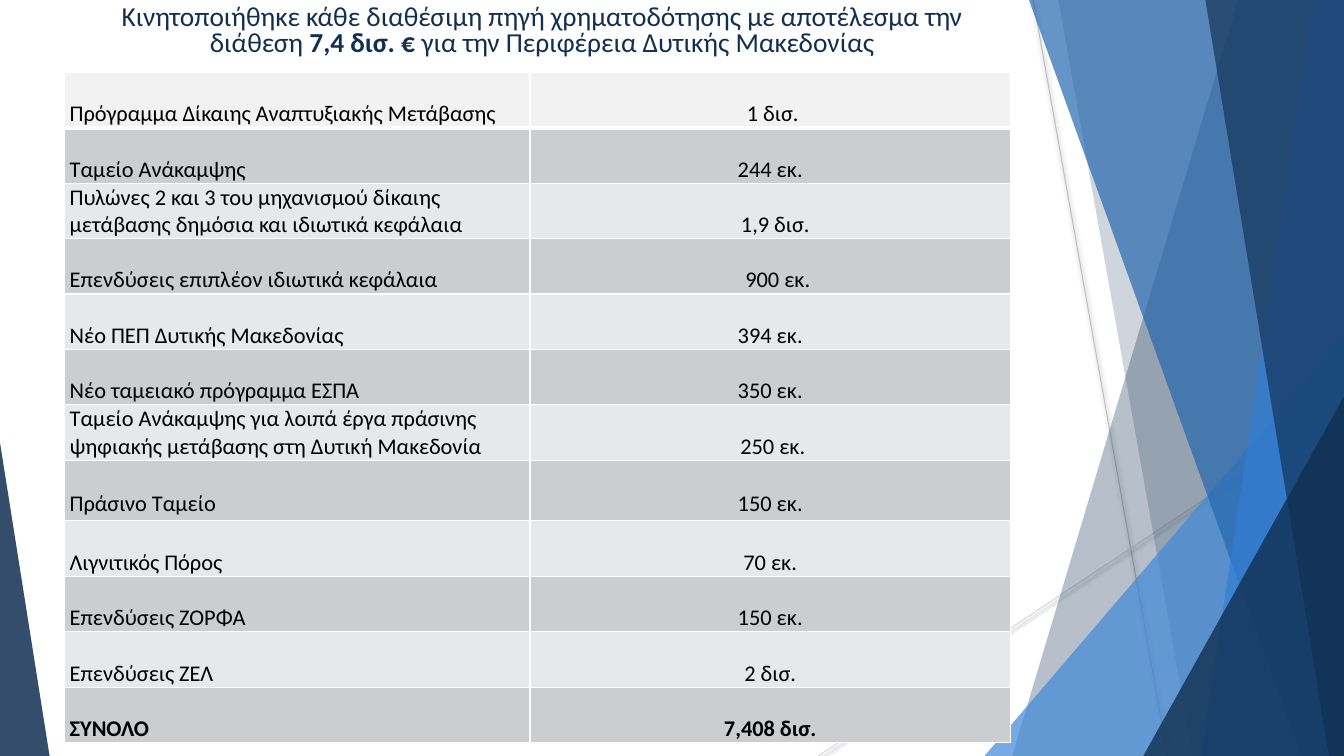
"""Builds the slide on funding sources for Western Macedonia."""
from lxml.etree import SubElement
from pptx import Presentation
from pptx.dml.color import RGBColor
from pptx.enum.shapes import MSO_CONNECTOR, MSO_SHAPE
from pptx.enum.text import MSO_ANCHOR, MSO_AUTO_SIZE, PP_ALIGN
from pptx.oxml.ns import qn
from pptx.util import Inches, Pt

COLORS = {
    "navy": "112F51", "blue": "2567AE", "bright": "337ED4", "sky": "438AD7",
    "black": "000000", "white": "FFFFFF", "header": "F2F2F2",
    "dark_band": "CCCDD0", "light_band": "E7E8E9",
    "gray_line": "BFBFBF", "pale_line": "D9D9D9",
}
COLUMNS, ROWS = 160, 90

TITLE = [
    ("Κινητοποιήθηκε κάθε διαθέσιμη πηγή χρηματοδότησης με αποτέλεσμα την διάθεση ", False),
    ("7,4 δισ. € ", True),
    ("για την Περιφέρεια Δυτικής Μακεδονίας", False),
]
FUNDING = [
    ("Πρόγραμμα Δίκαιης Αναπτυξιακής Μετάβασης", "1 δισ.", 0.05),
    ("Ταμείο Ανάκαμψης", "244 εκ.", 0),
    ("Πυλώνες 2 και 3 του μηχανισμού δίκαιης μετάβασης δημόσια και ιδιωτικά κεφάλαια",
     "1,9 δισ.", 0.1),
    ("Επενδύσεις επιπλέον ιδιωτικά κεφάλαια", "900 εκ.", 0.15),
    ("Νέο ΠΕΠ Δυτικής Μακεδονίας", "394 εκ.", 0),
    ("Νέο ταμειακό πρόγραμμα ΕΣΠΑ", "350 εκ.", 0),
    ("Ταμείο Ανάκαμψης για λοιπά έργα πράσινης ψηφιακής μετάβασης στη Δυτική Μακεδονία",
     "250 εκ.", 0.05),
    ("Πράσινο Ταμείο", "150 εκ.", 0),
    ("Λιγνιτικός Πόρος", "70 εκ.", 0),
    ("Επενδύσεις ΖΟΡΦΑ", "150 εκ.", 0),
    ("Επενδύσεις ΖΕΛ", "2 δισ.", 0),
    ("ΣΥΝΟΛΟ", "7,408 δισ.", 0),
]
GREEN_FUND = 7


class SlideBuilder:
    """Holds the style and the slide; lengths are grid columns and rows."""

    font = "Calibri"

    def __init__(self, deck):
        self.slide = deck.slides.add_slide(deck.slide_layouts[5])
        self.shapes = self.slide.shapes
        self.column = deck.slide_width / COLUMNS
        self.row = deck.slide_height / ROWS

    def x(self, columns):
        return round(columns * self.column)

    def y(self, rows):
        return round(rows * self.row)

    def rgb(self, color):
        return RGBColor.from_string(COLORS[color])

    def style_font(self, paragraph, size, color, bold=None):
        font = paragraph.font
        font.name, font.size, font.bold = self.font, Pt(size), bold
        font.color.rgb = self.rgb(color)

    def paint(self, shape, color, opacity):
        shape.shadow.inherit = False
        shape.line.fill.background()
        shape.fill.solid()
        shape.fill.fore_color.rgb = self.rgb(color)
        hue = shape.fill._xPr.find(qn("a:solidFill"))[0]
        SubElement(hue, qn("a:alpha"), val=str(opacity * 1000))

    def line(self, start, end, color):
        connector = self.shapes.add_connector(
            MSO_CONNECTOR.STRAIGHT, self.x(start[0]), self.y(start[1]),
            self.x(end[0]), self.y(end[1]))
        connector.line.color.rgb = self.rgb(color)
        connector.line.width = Pt(0.75)
        effects = SubElement(connector._element.spPr, qn("a:effectLst"))
        shadow = SubElement(effects, qn("a:outerShdw"), blurRad=str(Pt(3)),
                            dist=str(Pt(2)), dir="5400000", rotWithShape="0")
        shade = SubElement(shadow, qn("a:srgbClr"), val=COLORS["black"])
        SubElement(shade, qn("a:alpha"), val="40000")

    def facet(self, top, bottom, color, opacity):
        outline = self.shapes.build_freeform(self.x(top), 0)
        outline.add_line_segments([
            (self.x(COLUMNS), 0), (self.x(COLUMNS), self.y(ROWS)),
            (self.x(bottom), self.y(ROWS))], close=True)
        self.paint(outline.convert_to_shape(), color, opacity)

    def corner(self, left, top, width, apex, color, opacity):
        triangle = self.shapes.add_shape(
            MSO_SHAPE.ISOSCELES_TRIANGLE, self.x(left), self.y(top),
            self.x(width), self.y(ROWS - top))
        triangle.adjustments[0] = apex
        self.paint(triangle, color, opacity)

    def title(self, left, top, width, height, runs):
        heading = self.shapes.title
        heading.left, heading.top = self.x(left), self.y(top)
        heading.width, heading.height = self.x(width), self.y(height)
        frame = heading.text_frame
        frame.word_wrap, frame.auto_size = True, MSO_AUTO_SIZE.NONE
        frame.vertical_anchor = MSO_ANCHOR.TOP
        sentence = frame.paragraphs[0]
        sentence.alignment, sentence.line_spacing = PP_ALIGN.CENTER, 0.8
        self.style_font(sentence, 19.6, "navy")
        for words, bold in runs:
            run = sentence.add_run()
            run.text, run.font.bold = words, bold

    def borders(self, cell, top, bottom):
        properties = cell._tc.get_or_add_tcPr()
        for side, width in (("L", 1), ("R", 1), ("T", top), ("B", bottom)):
            edge = SubElement(properties, qn(f"a:ln{side}"), w=str(Pt(width)))
            fill = SubElement(edge, qn("a:solidFill"))
            SubElement(fill, qn("a:srgbClr"), val=COLORS["white"])

    def cell(self, cell, words, band, align, bold):
        cell.text = words
        cell.vertical_anchor = MSO_ANCHOR.BOTTOM
        cell.margin_left = cell.margin_right = Inches(0.05)
        cell.margin_top = cell.margin_bottom = 0
        cell.fill.solid()
        cell.fill.fore_color.rgb = self.rgb(band)
        paragraph = cell.text_frame.paragraphs[0]
        paragraph.alignment = align
        self.style_font(paragraph, 16, "black", bold)

    def table(self, left, top, widths, row_height, tall_height, entries):
        height = row_height * (len(entries) - 1) + tall_height
        table = self.shapes.add_table(
            len(entries), len(widths), self.x(left), self.y(top),
            self.x(sum(widths)), self.y(height)).table
        table.first_row = table.horz_banding = False
        for column, width in zip(table.columns, widths):
            column.width = self.x(width)
        for index, (source, amount, indent) in enumerate(entries):
            tall = index == GREEN_FUND
            table.rows[index].height = self.y(tall_height if tall else row_height)
            band = "header" if index == 0 else ("light_band", "dark_band")[index % 2]
            total = index == len(entries) - 1
            for position, words in enumerate((source, amount)):
                cell = table.cell(index, position)
                self.borders(cell, 3 if index == 1 else 1, 3 if index == 0 else 1)
                align = (PP_ALIGN.LEFT, PP_ALIGN.CENTER)[position]
                self.cell(cell, words, band, align, total)
                if tall:
                    cell.margin_bottom = Inches(0.03)
            cell.margin_left += Inches(indent)


def main():
    deck = Presentation()
    deck.slide_width, deck.slide_height = Inches(13.33), Inches(7.5)
    builder = SlideBuilder(deck)
    builder.line((123, 0), (139, 90), "gray_line")
    builder.line((160, 48.4), (97.4, 90), "pale_line")
    builder.facet(147.4, 120.5, "navy", 30)
    builder.facet(126, 142, "navy", 20)
    builder.corner(117.2, 40, 42.8, 1, "sky", 72)
    builder.facet(122.5, 154.9, "blue", 70)
    builder.facet(156.4, 143, "bright", 70)
    builder.facet(143.5, 158.2, "navy", 65)
    builder.corner(136.1, 47.2, 23.9, 1, "navy", 80)
    builder.corner(0, 52.7, 5.9, 0, "navy", 85)
    builder.title(12, 0, 105.1, 8.4, TITLE)
    builder.table(7.7, 8.6, (55.4, 57.2), 6.6, 7.2, FUNDING)
    deck.save("out.pptx")


if __name__ == "__main__":
    main()
